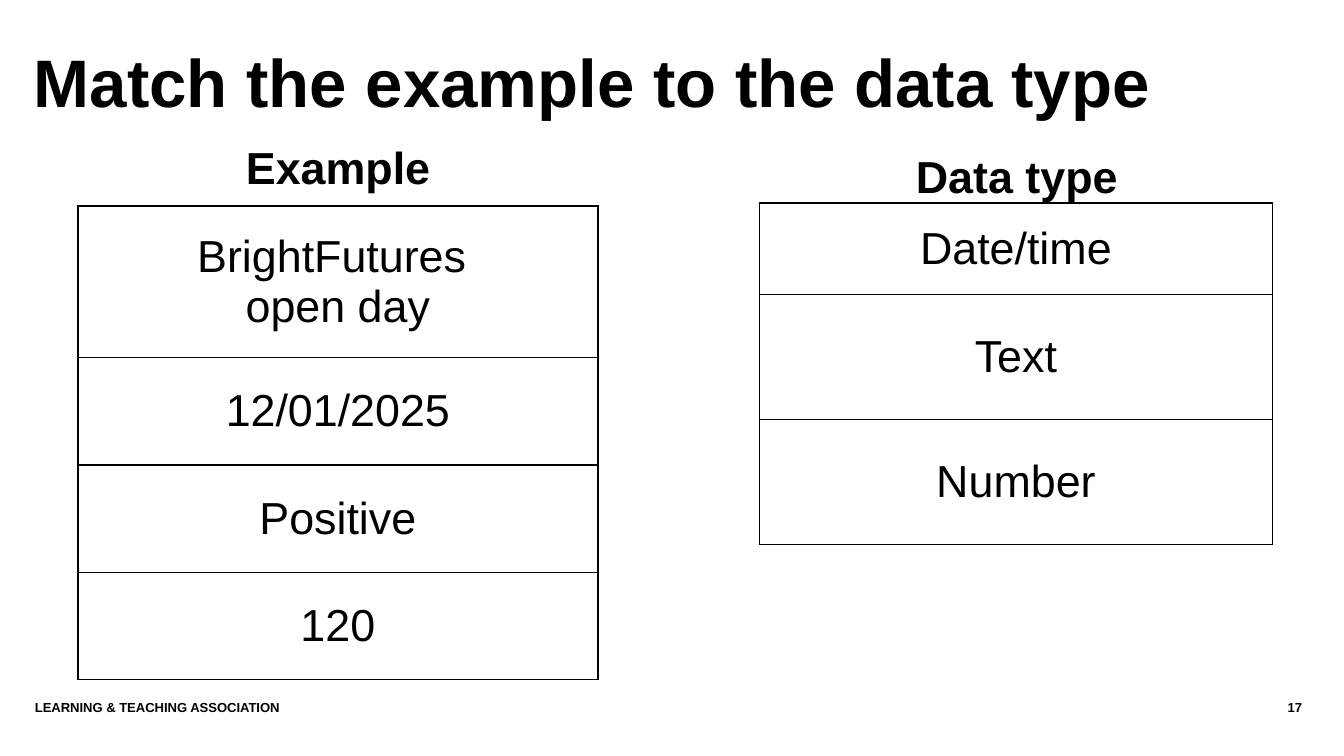
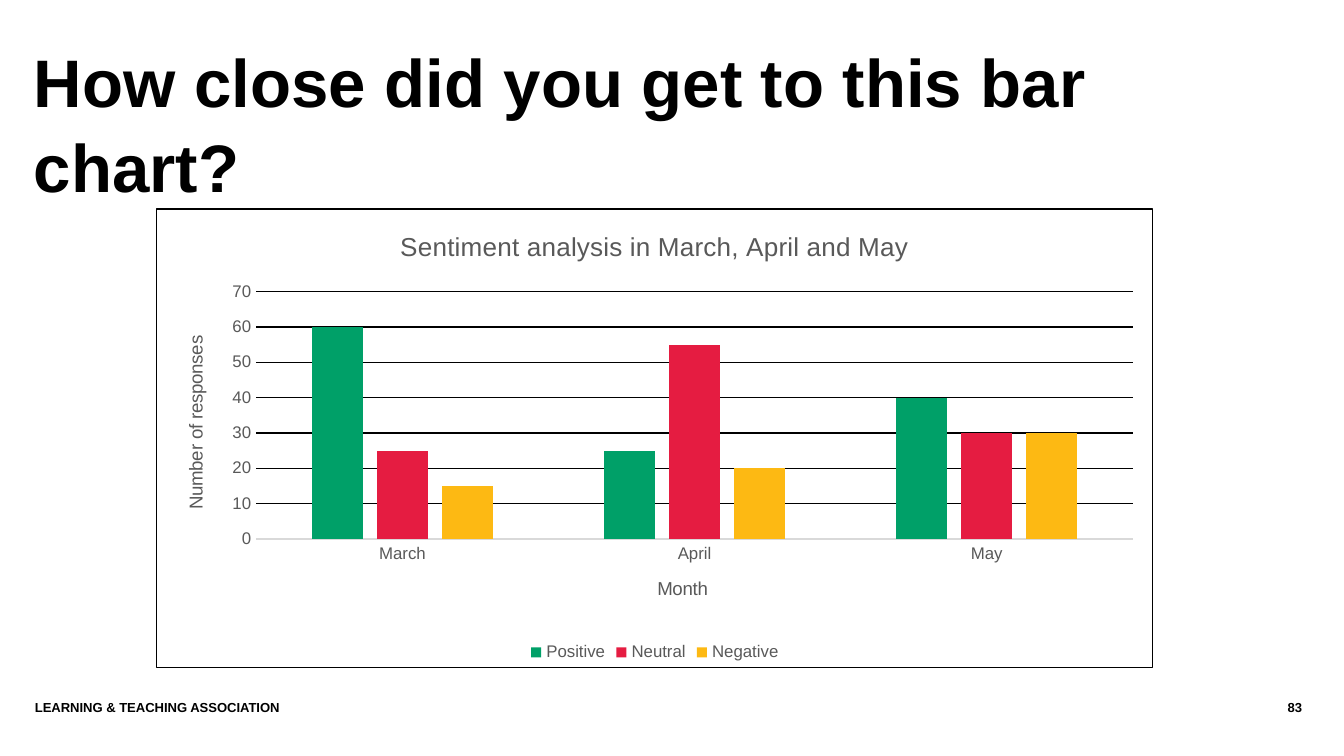
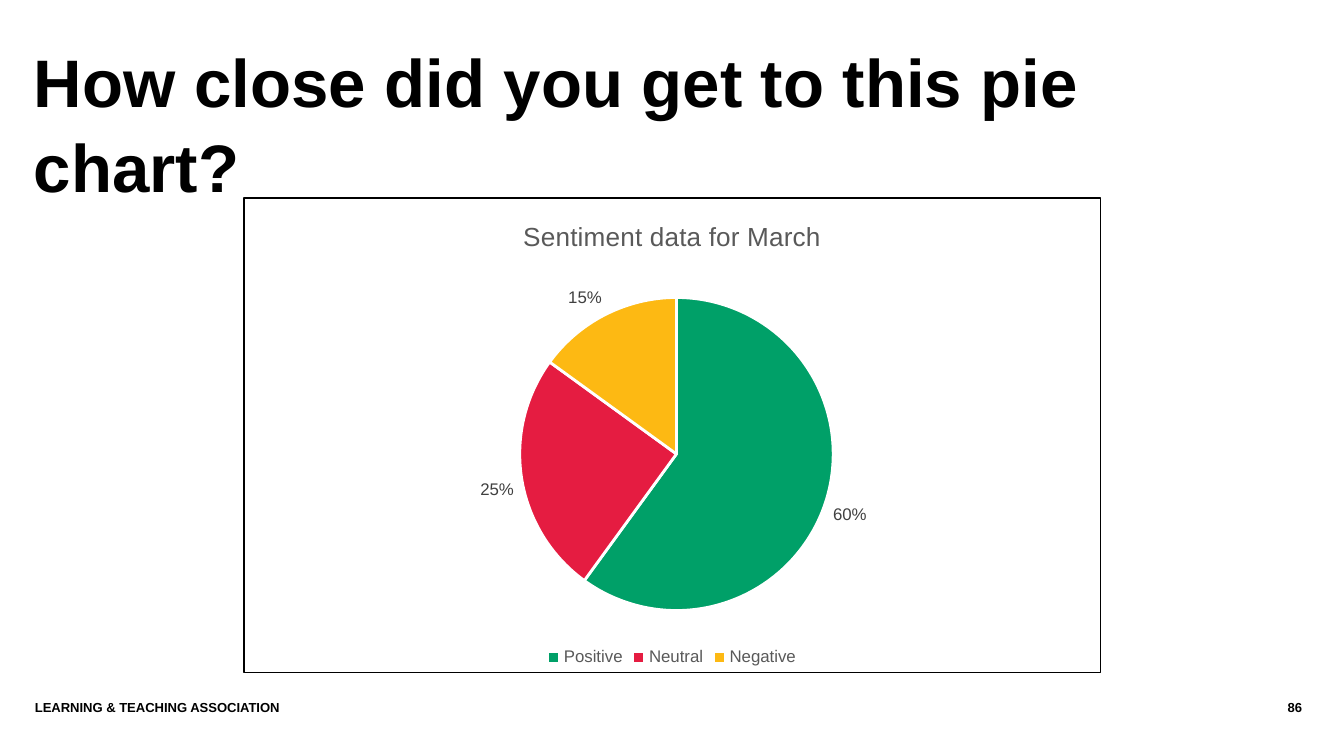
from dataclasses import dataclass

from lxml import etree
from pptx import Presentation
from pptx import util as u
from pptx.chart import data as chart_data
from pptx.dml.color import RGBColor
from pptx.enum import chart as chart_enum
from pptx.enum import text
from pptx.oxml import ns, parse_xml


@dataclass(frozen=True)
class Theme:
    font: str = "Arial"
    ink: str = "000000"
    paper: str = "FFFFFF"
    grey: str = "595959"
    label_grey: str = "404040"
    axis_grey: str = "D9D9D9"
    sentiments: tuple[str, ...] = ("00A068", "E51C41", "FDB913")
    title_size: float = 36
    body_size: float = 24
    footer_size: float = 7
    chart_title_size: float = 14
    axis_title_size: float = 10
    label_size: float = 9
    thin_line: float = 0.75
    table_line: float = 1
    slice_line: float = 1.5
    line_spacing: float = 1.05


@dataclass(frozen=True)
class Box:
    left: float
    top: float
    width: float
    height: float

    def lengths(self) -> tuple:
        return tuple(map(u.Cm, (self.left, self.top, self.width, self.height)))


@dataclass(frozen=True)
class MatchColumn:
    heading: str
    heading_box: Box
    table_box: Box
    row_heights: tuple[float, ...]
    entries: tuple[tuple[str, ...], ...]


@dataclass(frozen=True)
class ChartPanel:
    kind: chart_enum.XL_CHART_TYPE
    title: str
    box: Box
    plot_box: Box
    categories: tuple[str, ...]
    series: dict[str, tuple[float, ...]]
    number_format: str = "General"


THEME = Theme()
TITLE_BOX = Box(0.64, 0.69, 23.44, 1.93)
FOOTER_BOX = Box(0.66, 13.23, 21.36, 0.76)
NUMBER_BOX = Box(22.1, 13.23, 2.51, 0.76)
FOOTER = "LEARNING & TEACHING ASSOCIATION"
SENTIMENTS = ("Positive", "Neutral", "Negative")

MATCH_COLUMNS = (
    MatchColumn(
        "Example", Box(1.5, 2.59, 9.78, 1.02), Box(1.47, 3.89, 9.83, 8.97),
        (2.87, 2.03, 2.03, 2.03),
        (("BrightFutures ", "open day"), ("12/01/2025",), ("Positive",), ("120",)),
    ),
    MatchColumn(
        "Data type", Box(14.35, 2.77, 9.73, 1.02), Box(14.35, 3.84, 9.7, 6.45),
        (1.73, 2.36, 2.36),
        (("Date/time",), ("Text",), ("Number",)),
    ),
)
BAR_PANEL = ChartPanel(
    chart_enum.XL_CHART_TYPE.COLUMN_CLUSTERED,
    "Sentiment analysis in March, April and May",
    Box(2.95, 3.94, 18.85, 8.69), Box(0.1, 0.18, 0.88, 0.54),
    ("March", "April", "May"),
    dict(zip(SENTIMENTS, ((60, 25, 40), (25, 55, 30), (15, 20, 30)))),
)
PIE_PANEL = ChartPanel(
    chart_enum.XL_CHART_TYPE.PIE,
    "Sentiment data for March",
    Box(4.6, 3.73, 16.21, 8.99), Box(0.32, 0.21, 0.37, 0.66),
    SENTIMENTS, {"Series 1": (0.6, 0.25, 0.15)}, "0%",
)


def style_font(font, size: float, color: str, bold: bool = False) -> None:
    font.name = THEME.font
    font.size = u.Pt(size)
    font.bold = bold
    font.color.rgb = RGBColor.from_string(color)


def write_lines(frame, lines: tuple[str, ...], size: float, color: str = THEME.ink,
                bold: bool = False, align=None, spacing: float | None = None) -> None:
    for index, line in enumerate(lines):
        paragraph = frame.add_paragraph() if index else frame.paragraphs[0]
        paragraph.alignment = align
        paragraph.line_spacing = spacing
        run = paragraph.add_run()
        run.text = line
        style_font(run.font, size, color, bold)


def prepare_frame(frame, auto_size=text.MSO_AUTO_SIZE.NONE) -> None:
    frame.margin_left = frame.margin_right = frame.margin_top = frame.margin_bottom = 0
    frame.word_wrap = True
    frame.auto_size = auto_size
    frame.vertical_anchor = text.MSO_ANCHOR.TOP


def add_label(slide, box: Box, label: str, size: float, align=text.PP_ALIGN.LEFT,
              spacing: float | None = None,
              auto_size=text.MSO_AUTO_SIZE.NONE) -> None:
    shape = slide.shapes.add_textbox(*box.lengths())
    prepare_frame(shape.text_frame, auto_size)
    write_lines(shape.text_frame, (label,), size, bold=True, align=align, spacing=spacing)


def add_titled_slide(presentation, title: str, number: int):
    slide = presentation.slides.add_slide(presentation.slide_layouts[5])
    slide.background.fill.solid()
    slide.background.fill.fore_color.rgb = RGBColor.from_string(THEME.paper)
    shape = slide.shapes.title
    shape.left, shape.top, shape.width, shape.height = TITLE_BOX.lengths()
    prepare_frame(shape.text_frame)
    write_lines(shape.text_frame, (title,), THEME.title_size, bold=True,
                align=text.PP_ALIGN.LEFT, spacing=THEME.line_spacing)
    add_label(slide, FOOTER_BOX, FOOTER, THEME.footer_size)
    add_label(slide, NUMBER_BOX, str(number), THEME.footer_size, text.PP_ALIGN.RIGHT)
    return slide


def outline_cell(cell) -> None:
    properties = cell._tc.get_or_add_tcPr()
    for index, side in enumerate(("lnL", "lnR", "lnT", "lnB")):
        line = etree.Element(ns.qn(f"a:{side}"), w=str(u.Pt(THEME.table_line)))
        fill = etree.SubElement(line, ns.qn("a:solidFill"))
        etree.SubElement(fill, ns.qn("a:srgbClr"), val=THEME.ink)
        properties.insert(index, line)


def add_match_column(slide, column: MatchColumn) -> None:
    add_label(slide, column.heading_box, column.heading, THEME.body_size,
              text.PP_ALIGN.CENTER, THEME.line_spacing,
              text.MSO_AUTO_SIZE.SHAPE_TO_FIT_TEXT)
    table = slide.shapes.add_table(
        len(column.entries), 1, *column.table_box.lengths()).table
    table.first_row = table.horz_banding = False
    for row, height, lines in zip(table.rows, column.row_heights, column.entries):
        row.height = u.Cm(height)
        cell = row.cells[0]
        cell.vertical_anchor = text.MSO_ANCHOR.MIDDLE
        cell.fill.solid()
        cell.fill.fore_color.rgb = RGBColor.from_string(THEME.paper)
        write_lines(cell.text_frame, lines, THEME.body_size, align=text.PP_ALIGN.CENTER)
        outline_cell(cell)


def frame_chart(chart, plot_box: Box) -> None:
    chart_element = chart._chartSpace.find(ns.qn("c:chart"))
    chart_element.addnext(parse_xml(
        f'<c:spPr {ns.nsdecls("c", "a")}><a:noFill/><a:ln w="{u.Pt(THEME.thin_line)}">'
        f'<a:solidFill><a:srgbClr val="{THEME.ink}"/></a:solidFill></a:ln></c:spPr>'))
    plot_area = chart_element.find(ns.qn("c:plotArea"))
    for old_layout in plot_area.findall(ns.qn("c:layout")):
        plot_area.remove(old_layout)
    layout = etree.Element(ns.qn("c:layout"))
    manual = etree.SubElement(layout, ns.qn("c:manualLayout"))
    settings = {
        "layoutTarget": "inner", "xMode": "edge", "yMode": "edge",
        "x": plot_box.left, "y": plot_box.top,
        "w": plot_box.width, "h": plot_box.height,
    }
    for name, value in settings.items():
        etree.SubElement(manual, ns.qn(f"c:{name}"), val=str(value))
    plot_area.insert(0, layout)


def add_chart_panel(slide, panel: ChartPanel):
    data = chart_data.CategoryChartData(number_format=panel.number_format)
    data.categories = panel.categories
    for name, values in panel.series.items():
        data.add_series(name, values)
    chart = slide.shapes.add_chart(panel.kind, *panel.box.lengths(), data).chart
    style_font(chart.font, THEME.axis_title_size, THEME.ink)
    chart.has_title = True
    write_lines(chart.chart_title.text_frame, (panel.title,),
                THEME.chart_title_size, THEME.grey)
    chart.has_legend = True
    chart.legend.position = chart_enum.XL_LEGEND_POSITION.BOTTOM
    chart.legend.include_in_layout = False
    style_font(chart.legend.font, THEME.label_size, THEME.grey)
    frame_chart(chart, panel.plot_box)
    return chart


def paint(part, color: str) -> None:
    part.format.fill.solid()
    part.format.fill.fore_color.rgb = RGBColor.from_string(color)


def draw_line(line, color: str, width: float) -> None:
    line.color.rgb = RGBColor.from_string(color)
    line.width = u.Pt(width)


def style_bars(chart) -> None:
    plot = chart.plots[0]
    plot.gap_width = 219
    plot.overlap = -27
    plot.vary_by_categories = False
    for series, color in zip(plot.series, THEME.sentiments):
        paint(series, color)
        series.invert_if_negative = False
    axes = ((chart.category_axis, "Month"), (chart.value_axis, "Number of responses"))
    for axis, title in axes:
        axis.major_tick_mark = axis.minor_tick_mark = chart_enum.XL_TICK_MARK.NONE
        style_font(axis.tick_labels.font, THEME.label_size, THEME.grey)
        axis.has_title = True
        write_lines(axis.axis_title.text_frame, (title,),
                    THEME.axis_title_size, THEME.grey)
    draw_line(chart.category_axis.format.line, THEME.axis_grey, THEME.thin_line)
    chart.value_axis.format.line.fill.background()
    chart.value_axis.has_major_gridlines = True
    draw_line(chart.value_axis.major_gridlines.format.line, THEME.ink, THEME.thin_line)


def style_slices(chart) -> None:
    series = chart.plots[0].series[0]
    for index, color in enumerate(THEME.sentiments):
        point = series.points[index]
        paint(point, color)
        draw_line(point.format.line, THEME.paper, THEME.slice_line)
    labels = series.data_labels
    labels.show_value = True
    labels.show_percentage = False
    labels.number_format = PIE_PANEL.number_format
    labels.number_format_is_linked = False
    labels.position = chart_enum.XL_LABEL_POSITION.OUTSIDE_END
    style_font(labels.font, THEME.label_size, THEME.label_grey)


def main() -> None:
    presentation = Presentation()
    presentation.slide_width = u.Cm(25.4)
    presentation.slide_height = u.Cm(14.29)

    match_slide = add_titled_slide(presentation, "Match the example to the data type", 17)
    for column in MATCH_COLUMNS:
        add_match_column(match_slide, column)

    bar_slide = add_titled_slide(
        presentation, "How close did you get to this bar chart?", 83)
    style_bars(add_chart_panel(bar_slide, BAR_PANEL))

    pie_slide = add_titled_slide(
        presentation, "How close did you get to this pie chart?", 86)
    style_slices(add_chart_panel(pie_slide, PIE_PANEL))

    presentation.save("out.pptx")


if __name__ == "__main__":
    main()
